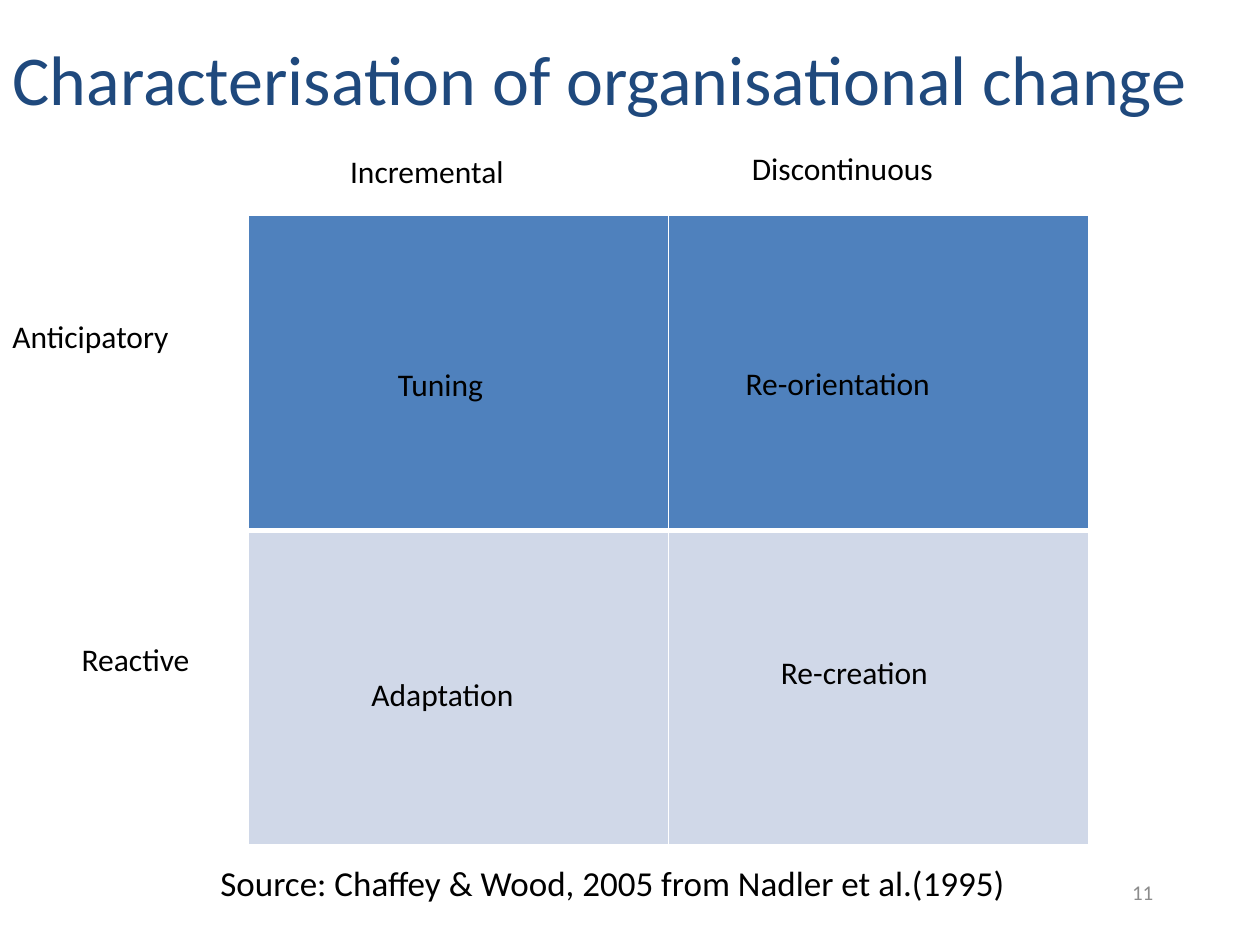
from lxml import etree
from pptx import Presentation
from pptx.dml.color import RGBColor
from pptx.enum.text import MSO_ANCHOR, MSO_AUTO_SIZE, PP_ALIGN
from pptx.oxml.ns import qn
from pptx.util import Pt

LEFT, RIGHT = PP_ALIGN.LEFT, PP_ALIGN.RIGHT
TOP, MIDDLE = MSO_ANCHOR.TOP, MSO_ANCHOR.MIDDLE
GROW, FIXED = MSO_AUTO_SIZE.SHAPE_TO_FIT_TEXT, MSO_AUTO_SIZE.NONE
TITLE_ONLY = 5

TITLE = "Characterisation of organisational change"
TITLE_BOX = (0, 16.6, 686, 55.4)
LABEL_HEIGHT = 36
# text, left, top, width
LABELS = [
    ("Incremental", 193, 83.5, 130),
    ("Discontinuous", 422.6, 81.4, 155),
    ("Anticipatory", 0, 177.8, 137),
    ("Reactive", 39.6, 362.2, 99),
    ("Tuning", 220.3, 205.2, 84),
    ("Re-orientation", 419, 204.5, 154),
    ("Adaptation", 205.2, 382.3, 122),
    ("Re-creation", 439.2, 369.4, 127),
]
SOURCE = "Source: Chaffey & Wood, 2005 from Nadler et al.(1995)"
SOURCE_BOX = (118.8, 488.9, 472, 31.7)
NUMBER = "11"
NUMBER_BOX = (516.2, 491.8, 150, 36)

MATRIX_LEFT, MATRIX_TOP, CELL_WIDTH, CELL_HEIGHT = 142, 123, 240, 180
# fill, bottom border width
MATRIX_ROWS = [("4F81BD", 3), ("D0D8E8", 1)]


def color(value):
    return RGBColor.from_string(value)


def write(shape, text, size=18, fill="000000", align=LEFT, anchor=TOP,
          wrap=False, auto_size=GROW):
    frame = shape.text_frame
    frame.text = text
    frame.word_wrap = wrap
    frame.auto_size = auto_size
    frame.vertical_anchor = anchor
    paragraph = frame.paragraphs[0]
    paragraph.alignment = align
    font = paragraph.runs[0].font
    font.name, font.size = "Calibri", Pt(size)
    font.color.rgb = color(fill)


def place(shape, box):
    shape.left, shape.top, shape.width, shape.height = map(Pt, box)


def add_text(slide, box, text, **text_format):
    write(slide.shapes.add_textbox(*map(Pt, box)), text, **text_format)


def set_borders(cell, widths, fill="FFFFFF"):
    """Draw the left, right, top and bottom borders, in that order."""
    properties = cell._tc.get_or_add_tcPr()
    for side, width in zip("LRTB", widths):
        line = etree.SubElement(properties, qn(f"a:ln{side}"), w=str(Pt(width)))
        solid = etree.SubElement(line, qn("a:solidFill"))
        etree.SubElement(solid, qn("a:srgbClr"), val=fill)


def add_matrix(slide):
    count = len(MATRIX_ROWS)
    table = slide.shapes.add_table(
        count, 2, Pt(MATRIX_LEFT), Pt(MATRIX_TOP),
        Pt(2 * CELL_WIDTH), Pt(count * CELL_HEIGHT)).table
    top_width = 1
    for row, (fill, bottom_width) in zip(table.rows, MATRIX_ROWS):
        row.height = Pt(CELL_HEIGHT)
        for cell in row.cells:
            set_borders(cell, (1, 1, top_width, bottom_width))
            cell.fill.solid()
            cell.fill.fore_color.rgb = color(fill)
        top_width = bottom_width


def main():
    presentation = Presentation()
    presentation.slide_width, presentation.slide_height = Pt(720), Pt(540)
    slide = presentation.slides.add_slide(presentation.slide_layouts[TITLE_ONLY])

    title = slide.shapes.title
    place(title, TITLE_BOX)
    write(title, TITLE, size=40, fill="1F497D")

    add_matrix(slide)
    for text, left, top, width in LABELS:
        add_text(slide, (left, top, width, LABEL_HEIGHT), text)
    add_text(slide, SOURCE_BOX, SOURCE, size=20)
    add_text(slide, NUMBER_BOX, NUMBER, size=12, fill="8C8C8C", align=RIGHT,
             anchor=MIDDLE, wrap=True, auto_size=FIXED)
    presentation.save("out.pptx")


if __name__ == "__main__":
    main()
